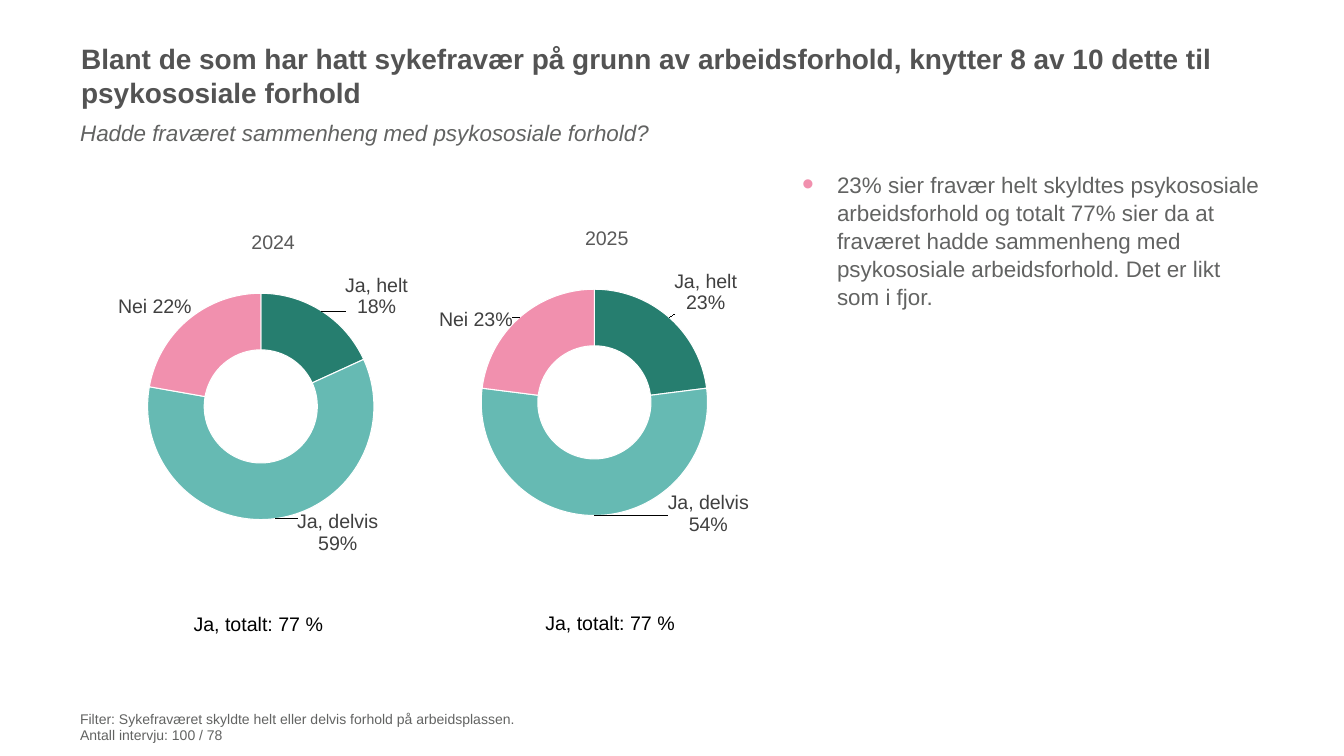
from dataclasses import dataclass

from lxml.etree import SubElement
from pptx import Presentation
from pptx.chart.data import CategoryChartData as Data
from pptx.dml.color import RGBColor as Rgb
from pptx.enum.chart import XL_CHART_TYPE as Kind
from pptx.enum.text import MSO_ANCHOR as Anchor, PP_ALIGN as Align
from pptx.oxml import parse_xml
from pptx.oxml.ns import nsdecls, qn
from pptx.util import Inches, Pt


@dataclass(frozen=True)
class Theme:
    face: str = "Arial"
    head: str = "535353"
    body: str = "626362"
    label: str = "404040"
    year: str = "595959"
    black: str = "000000"
    white: str = "FFFFFF"
    pink: str = "F190AE"
    slices: tuple = ("267E6F", "66BAB3", "F190AE")
    big: int = 40
    mid: int = 32
    note: int = 28
    small: int = 20


LOOK = Theme()
NAMES = ("Ja, helt", "Ja, delvis", "Nei")


def style(font, size, color, bold=False, italic=False):
    font.name = LOOK.face
    font.size = Pt(size)
    font.color.rgb = Rgb.from_string(color)
    font.bold = bold
    font.italic = italic


def bullet(para):
    props = para._p.get_or_add_pPr()
    props.set("marL", str(Inches(0.69)))
    props.set("indent", str(-Inches(0.69)))
    tint = SubElement(props, qn("a:buClr"))
    SubElement(tint, qn("a:srgbClr"), val=LOOK.pink)
    SubElement(props, qn("a:buSzPct"), val="150000")
    SubElement(props, qn("a:buFont"), typeface=LOOK.face)
    SubElement(props, qn("a:buChar"), char="•")


def write(slide, text, at, size, color=LOOK.body, bold=False, italic=False,
          align=Align.LEFT, anchor=Anchor.TOP, dot=False, space=None):
    frame = slide.shapes.add_textbox(*map(Inches, at)).text_frame
    frame.word_wrap = True
    frame.vertical_anchor = anchor
    frame.margin_left = frame.margin_right = Inches(0.06)
    frame.margin_top = frame.margin_bottom = Inches(0.06)
    for i, line in enumerate(text.split("\n")):
        para = frame.paragraphs[0] if i == 0 else frame.add_paragraph()
        if dot:
            bullet(para)
        para.alignment = align
        para.line_spacing = space
        run = para.add_run()
        run.text = line
        style(run.font, size, color, bold, italic)


def layout(x, y, inner=""):
    return parse_xml(
        f'<c:layout {nsdecls("c")}><c:manualLayout>{inner}'
        f'<c:x val="{x}"/><c:y val="{y}"/></c:manualLayout></c:layout>')


def place(chart):
    area = chart._chartSpace.find(".//" + qn("c:plotArea"))
    old = area.find(qn("c:layout"))
    if old is not None:
        area.remove(old)
    edge = '<c:xMode val="edge"/><c:yMode val="edge"/>'
    box = layout(0.192, 0.065, '<c:layoutTarget val="inner"/>' + edge)
    for tag, val in (("c:w", "0.616"), ("c:h", "0.845")):
        SubElement(box[0], qn(tag), val=val)
    area.insert(0, box)
    title = chart.chart_title._element
    old = title.find(qn("c:layout"))
    if old is not None:
        title.remove(old)
    title.find(qn("c:tx")).addnext(layout(0.465, 0.02, edge))
    area.find(".//" + qn("c:holeSize")).set("val", "60")


def shift(point, x, y):
    label = point.data_label
    style(label.font, LOOK.note, LOOK.label)
    node = label._dLbl
    node.find(qn("c:idx")).addnext(layout(x, y))
    for tag, val in (("c:showVal", "1"), ("c:showCatName", "1"),
                     ("c:showPercent", "0"), ("c:showSerName", "0")):
        node.find(qn(tag)).set("val", val)
    spot = node.find(qn("c:dLblPos"))
    if spot is not None:
        node.remove(spot)
    SubElement(node, qn("c:separator")).text = " "


def ring(slide, year, at, vals, moves):
    data = Data(number_format="0%")
    data.categories = NAMES
    data.add_series("Series 1", vals)
    chart = slide.shapes.add_chart(
        Kind.DOUGHNUT, *map(Inches, at), data).chart
    style(chart.font, 10, LOOK.black)
    chart.has_legend = False
    chart.has_title = True
    run = chart.chart_title.text_frame.paragraphs[0].add_run()
    run.text = year
    style(run.font, LOOK.note, LOOK.year)
    place(chart)
    plot = chart.plots[0]
    plot.vary_by_categories = True
    series = plot.series[0]
    labels = series.data_labels
    labels.show_value = labels.show_category_name = True
    labels.show_percentage = False
    labels.number_format = "0%"
    labels.number_format_is_linked = False
    style(labels.font, LOOK.note, LOOK.label)
    for i, (color, move) in enumerate(zip(LOOK.slices, moves)):
        point = series.points[i]
        point.format.fill.solid()
        point.format.fill.fore_color.rgb = Rgb.from_string(color)
        point.format.line.color.rgb = Rgb.from_string(LOOK.white)
        point.format.line.width = Pt(1.5)
        shift(point, *move)


def main():
    deck = Presentation()
    deck.slide_width, deck.slide_height = Inches(26.67), Inches(15)
    slide = deck.slides.add_slide(deck.slide_layouts[6])
    write(slide, "Blant de som har hatt sykefravær på grunn av arbeidsforhold, "
          "knytter 8 av 10 dette til psykososiale forhold",
          (1.55, 0.88, 23.66, 1.22), LOOK.big, LOOK.head, bold=True,
          anchor=Anchor.MIDDLE)
    write(slide, "Hadde fraværet sammenheng med psykososiale forhold?",
          (1.53, 2.31, 18.44, 0.8), LOOK.mid, italic=True)
    write(slide, "23% sier fravær helt skyldtes psykososiale arbeidsforhold og "
          "totalt 77% sier da at fraværet hadde sammenheng med psykososiale "
          "arbeidsforhold. Det er likt som i fjor.",
          (15.86, 3.31, 9.35, 10.31), LOOK.mid, dot=True, space=1.04)
    ring(slide, "2024", (1.53, 4.34, 7.29, 7.64), (0.18, 0.59, 0.22),
         ((0.19, -0.1), (0.18, 0.11), (-0.14, -0.09)))
    ring(slide, "2025", (8.15, 4.26, 7.29, 7.64), (0.23, 0.54, 0.23),
         ((0.15, -0.12), (0.31, 0.07), (-0.17, -0.05)))
    for left, top in ((2.61, 12.08), (9.59, 12.06)):
        write(slide, "Ja, totalt: 77 %", (left, top, 5.03, 0.58), LOOK.note,
              LOOK.black, align=Align.CENTER, anchor=Anchor.MIDDLE)
    write(slide, "Filter: Sykefraværet skyldte helt eller delvis forhold på "
          "arbeidsplassen.\nAntall intervju: 100 / 78",
          (1.53, 14.03, 23.36, 0.8), LOOK.small)
    deck.save("out.pptx")


if __name__ == "__main__":
    main()
